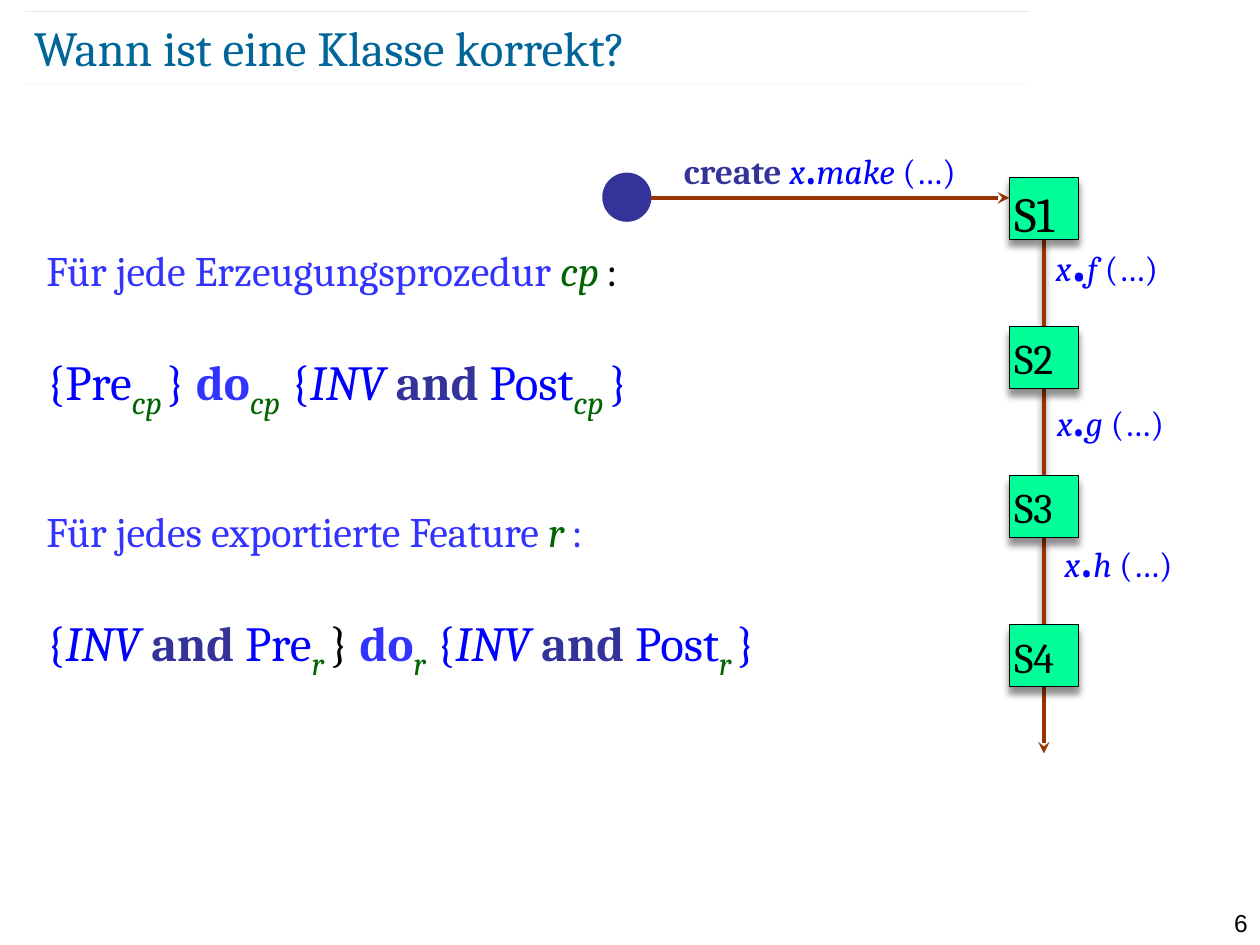
from lxml import etree
from pptx import Presentation
from pptx.dml.color import RGBColor
from pptx.enum.shapes import MSO_CONNECTOR, MSO_SHAPE
from pptx.enum.text import MSO_ANCHOR, PP_ALIGN
from pptx.oxml.ns import qn
from pptx.util import Inches, Pt

STRAIGHT = MSO_CONNECTOR.STRAIGHT
RECTANGLE, OVAL = MSO_SHAPE.RECTANGLE, MSO_SHAPE.OVAL
TOP, MIDDLE = MSO_ANCHOR.TOP, MSO_ANCHOR.MIDDLE
LEFT, RIGHT = PP_ALIGN.LEFT, PP_ALIGN.RIGHT

SERIF, SANS = "Cambria", "Arial"
BLACK, TEAL, BROWN, MINT = "000000", "006699", "993300", "00FF99"
BLUE, VIOLET, NAVY, GREEN = "0000FF", "3333FF", "333399", "006400"

INV = ("INV ", {"italic": True})
AND = ("and ", {"color": NAVY, "bold": True})
DO = ("do", {"color": VIOLET, "bold": True})


def rgb(value):
    """Turn a hex string into a colour."""
    return RGBColor.from_string(value)


def add_effects(shape, shadow=False):
    """Replace the theme effects by none or by a soft shadow below."""
    effects = etree.SubElement(shape._element.spPr, qn("a:effectLst"))
    if shadow:
        outer = etree.SubElement(effects, qn("a:outerShdw"), blurRad=str(Pt(4)),
                                 dist=str(Pt(4)), dir="5400000", rotWithShape="0")
        color = etree.SubElement(outer, qn("a:srgbClr"), val=BLACK)
        etree.SubElement(color, qn("a:alpha"), val="43000")


def add_line(page, start, end, color=BROWN, width=2.25, arrow=False, shadow=False, alpha=None):
    """Draw a straight line between two points given in inches."""
    line = page.shapes.add_connector(STRAIGHT, *map(Inches, start + end))
    line.line.color.rgb = rgb(color)
    line.line.width = Pt(width)
    outline = line.line._get_or_add_ln()
    if alpha:
        tint = outline.find(".//" + qn("a:srgbClr"))
        etree.SubElement(tint, qn("a:alpha"), val=str(alpha * 1000))
    if arrow:
        etree.SubElement(outline, qn("a:tailEnd"), type="stealth")
    add_effects(line, shadow)


def fill_para(para, spans, size, color, font=SERIF):
    """Write styled spans into a paragraph."""
    para.font.name, para.font.size, para.font.color.rgb = font, Pt(size), rgb(color)
    for text, style in spans:
        span = para.add_run()
        span.text = text
        span.font.name = font
        span.font.size = Pt(style.get("size", size))
        span.font.color.rgb = rgb(style.get("color", color))
        span.font.bold = style.get("bold", False)
        span.font.italic = style.get("italic", False)
        if "baseline" in style:
            span._r.get_or_add_rPr().set("baseline", str(style["baseline"]))


def set_frame(frame, insets, anchor=TOP, wrap=True):
    """Set the margins, anchor and wrapping of a text frame."""
    frame.word_wrap, frame.vertical_anchor = wrap, anchor
    sides = map(Inches, insets)
    frame.margin_left, frame.margin_top, frame.margin_right, frame.margin_bottom = sides


def add_text(page, box, insets=(0.1, 0.05, 0.1, 0.05), anchor=TOP):
    """Add a wrapping text box and return its frame."""
    frame = page.shapes.add_textbox(*map(Inches, box)).text_frame
    set_frame(frame, insets, anchor)
    return frame


def add_header(page, box):
    """Place the title between two faint rules."""
    left, top, width, height = box
    for shift, y in ((0.02, top), (0, top + height)):
        add_line(page, (left + shift, y), (left + shift + width, y), TEAL, 0.1, alpha=35)
    frame = add_text(page, (left + 0.09, top + 0.04, 8.69, 0.48), (0, 0, 0, 0), MIDDLE)
    fill_para(frame.paragraphs[0], [("Wann ist eine Klasse korrekt?", {})], 28, TEAL)


def indexed(name, gap):
    """Return a subscript and the narrow gap after it."""
    style = {"color": GREEN, "italic": True, "baseline": -25000}
    return [(name, {**style, "size": 32}), (" ", {**style, "size": gap})]


def add_rules(page, box):
    """Write the two correctness rules, each a heading and a formula."""
    def heading(text, name, gap, colon):
        return [(text, {}), (name, {"color": GREEN, "italic": True}),
                (" ", {"size": gap, "italic": True}), (":", {"color": colon})]

    def formula(before, name, gap, brace):
        return [("{", {}), *before, ("Pre", {}), *indexed(name, gap), ("} ", {"color": brace}),
                DO, indexed(name, 28)[0], (" ", {}), ("{", {}), INV, AND, ("Post", {}),
                *indexed(name, 24), ("}", {})]

    lines = [
        (heading("Für jede Erzeugungsprozedur ", "cp", 18, BLACK), 24, VIOLET, 0),
        (formula([], "cp", 20, BLUE), 28, BLUE, 28.6),
        (heading("Für jedes exportierte Feature ", "r", 20, VIOLET), 24, VIOLET, 48),
        (formula([INV, AND], "r", 28, BLACK), 28, BLUE, 28.6),
    ]
    frame = add_text(page, box)
    for index, (spans, size, color, space) in enumerate(lines):
        para = frame.add_paragraph() if index else frame.paragraphs[0]
        para.space_before = Pt(space)
        fill_para(para, spans, size, color)


def add_call(page, box, feature, dot, prefix=(), **frame_options):
    """Label a transition with a feature call on x."""
    para = add_text(page, box, **frame_options).paragraphs[0]
    para.line_spacing = 0.7
    spans = [*prefix, ("x", {"italic": True}), (".", {"size": dot}),
             (feature, {"italic": True}), (" (…)", {})]
    fill_para(para, spans, 20, BLUE)


def add_node(page, kind, box, fill):
    """Add a filled shape without an outline."""
    node = page.shapes.add_shape(kind, *map(Inches, box))
    node.fill.solid()
    node.fill.fore_color.rgb = rgb(fill)
    node.line.fill.background()
    return node


def add_state(page, box, name, size):
    """Draw one named state square."""
    state = add_node(page, RECTANGLE, box, MINT)
    state.line.color.rgb = rgb(BLACK)
    state.line.width = Pt(0.75)
    add_effects(state, shadow=True)
    set_frame(state.text_frame, (0.04, 0.05, 0, 0), wrap=False)
    para = state.text_frame.paragraphs[0]
    para.alignment = LEFT
    fill_para(para, [(name, {})], size, BLACK)


def add_life_cycle(page, box):
    """Draw the object's creation and its chain of states."""
    left, top, width, height = box
    side, tall, pitch = 0.55, 0.49, 1.183
    state_left, first = left + width - side, top + 0.04
    middle, start_y = state_left + side / 2, top + 0.2
    start = add_node(page, OVAL, (left, top, 0.39, 0.39), NAVY)
    start.shadow.inherit = False
    add_line(page, (left + 0.39, start_y), (state_left, start_y), arrow=True)
    add_call(page, (left + 0.55, top - 0.25, 2.6, 0.5), "make", 32,
             [("create ", {"color": NAVY, "bold": True})])
    for index in range(4):
        y = first + index * pitch
        last = index == 3
        end = top + height if last else y + pitch
        add_line(page, (middle, y + tall), (middle, end), arrow=last, shadow=not last)
        add_state(page, (state_left, y, side, tall), f"S{index + 1}", 24 if index else 28)
    calls = (("f", 44, 3.6, 0.45), ("g", 36, 3.61, 1.76), ("h", 36, 3.67, 2.88))
    for feature, dot, x, y in calls:
        add_call(page, (left + x, top + y, 1.46, 0.5), feature, dot, insets=(0, 0, 0, 0))


def add_page_number(page, box):
    """Place the page number at the right."""
    para = add_text(page, box).paragraphs[0]
    para.alignment = RIGHT
    fill_para(para, [("6", {})], 14, BLACK, SANS)


def main():
    """Build the slide and save it."""
    deck = Presentation()
    deck.slide_width, deck.slide_height = Inches(10), Inches(7.5)
    page = deck.slides.add_slide(deck.slide_layouts[6])
    add_page_number(page, (9.45, 7.16, 0.55, 0.24))
    add_header(page, (0.18, 0.09, 7.97, 0.58))
    add_rules(page, (0.27, 1.89, 7.2, 3.8))
    add_life_cycle(page, (4.78, 1.37, 3.78, 4.61))
    deck.save("out.pptx")


if __name__ == "__main__":
    main()
